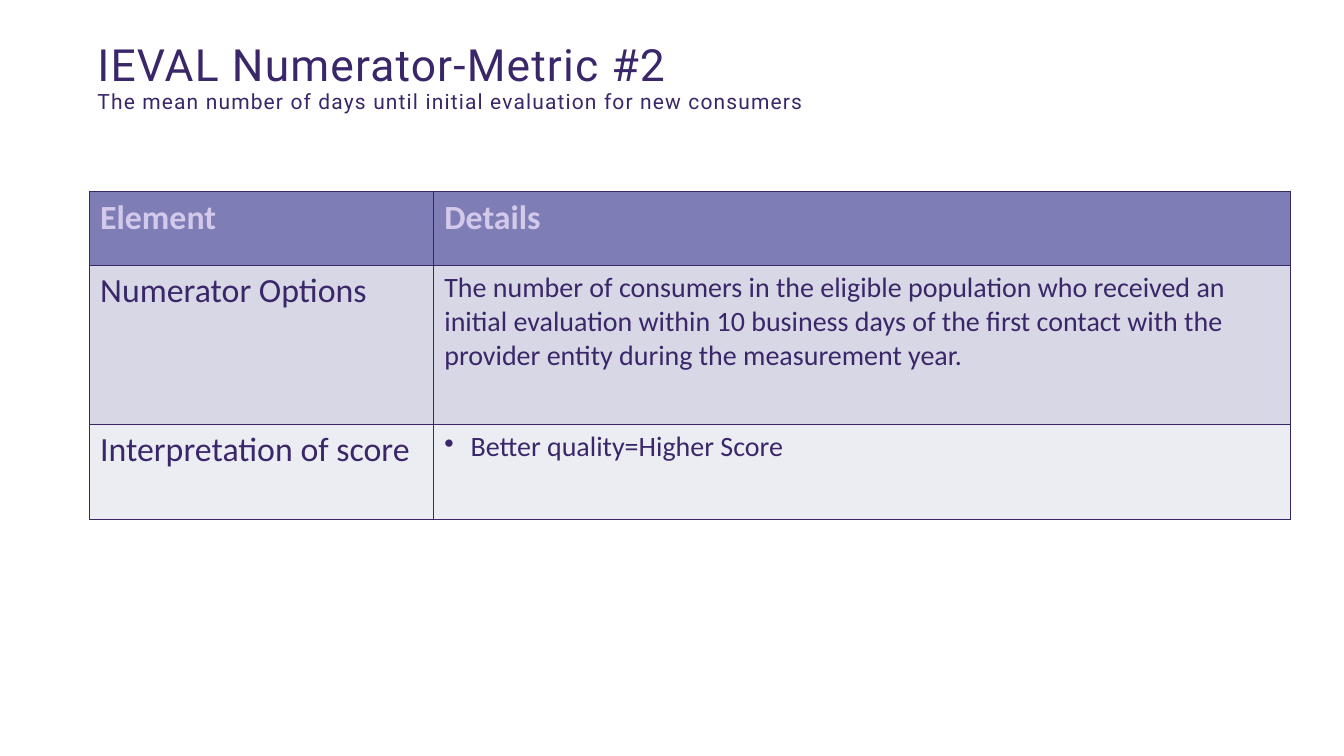
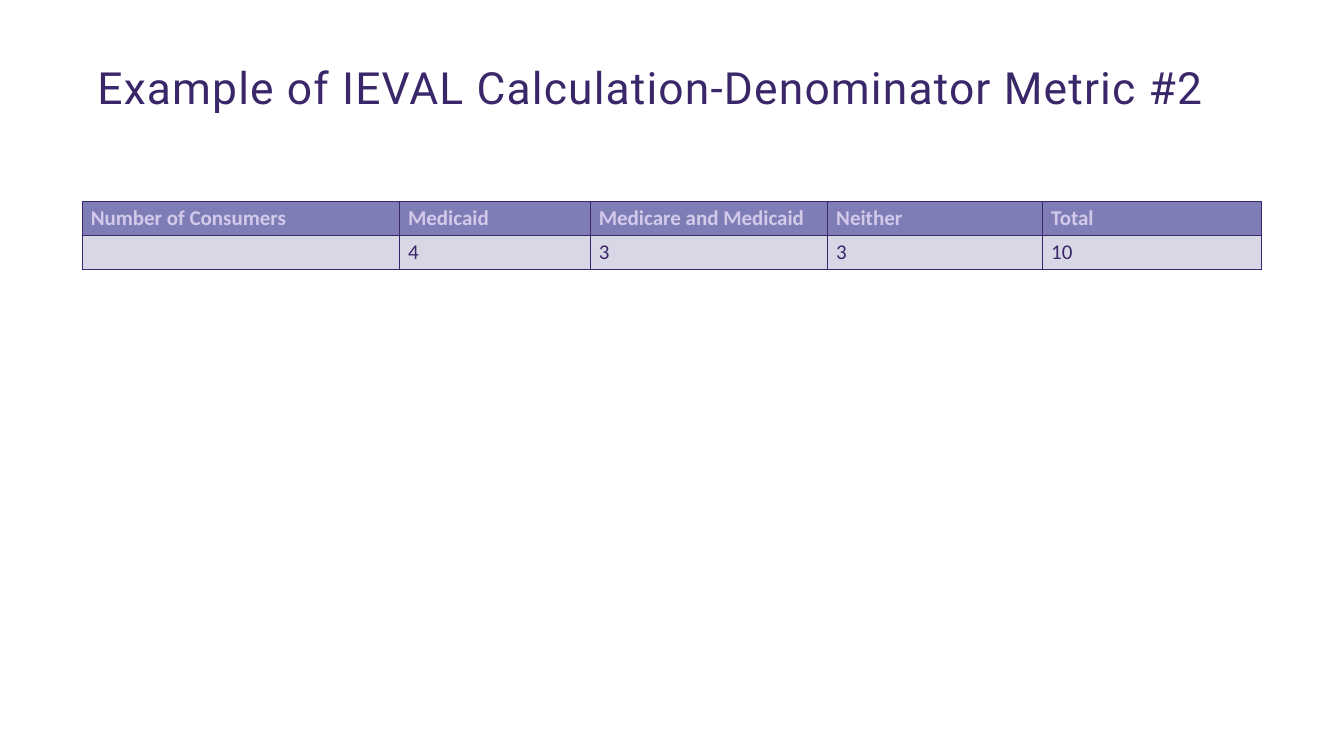
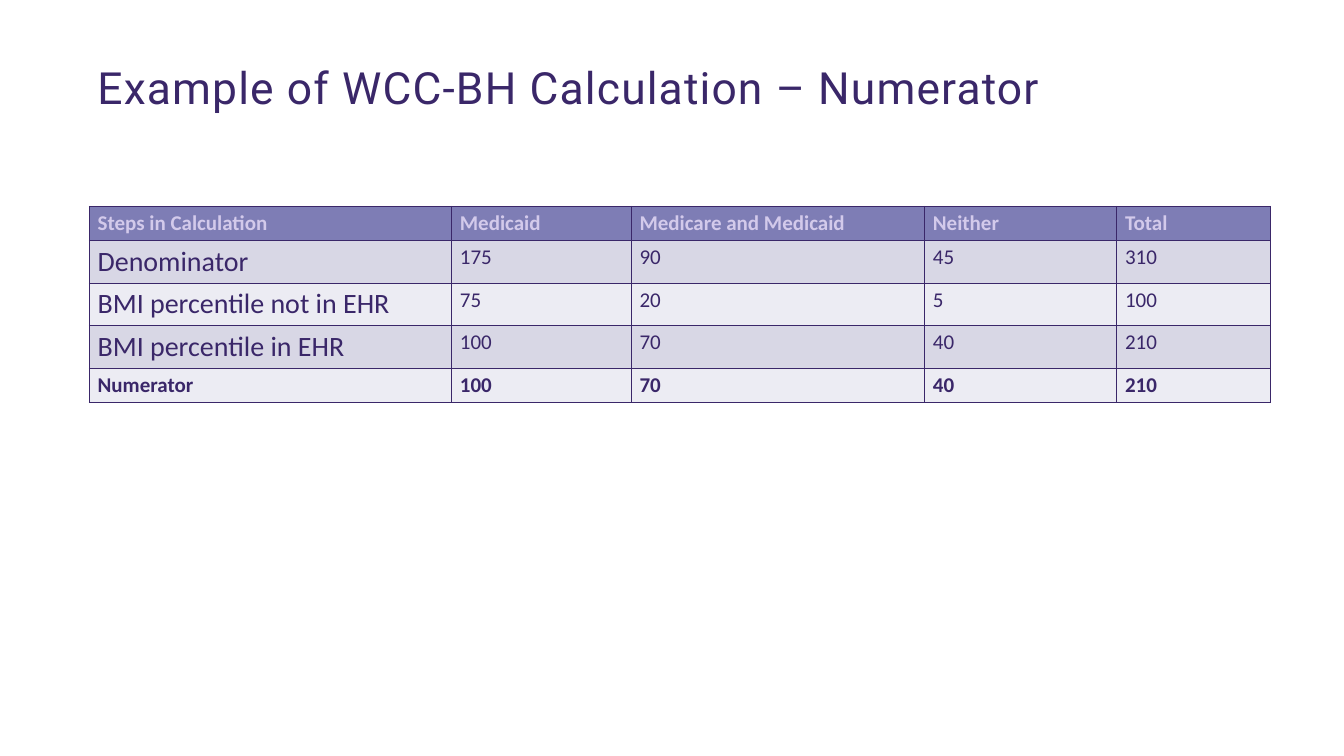
import pptx
import pptx.dml.color
import pptx.enum.text
import pptx.oxml
import pptx.oxml.ns
import pptx.util

Pt = pptx.util.Pt
COLORS = {
    "ink": "3A2769",
    "header_fill": "7E7DB5",
    "header_text": "D3CAEB",
    "band_dark": "D8D7E5",
    "band_light": "ECECF3",
}
TITLE_FONT = "Roboto"
TABLE_FONT = "Calibri"
TITLE_LEFT = 76.3
PAYERS = ["Medicaid", "Medicare and Medicaid", "Neither", "Total"]


def color(name):
    return pptx.dml.color.RGBColor.from_string(COLORS[name])


def add_title_run(para, text, size):
    span = para.add_run()
    span.text = text
    span.font.size = Pt(size)
    span._r.get_or_add_rPr().set("spc", "100")


def add_page(deck, title, top, width, height, subtitle=None):
    page = deck.slides.add_slide(deck.slide_layouts[5])
    box = page.shapes.title
    box.left, box.top = Pt(TITLE_LEFT), Pt(top)
    box.width, box.height = Pt(width), Pt(height)
    frame = box.text_frame
    frame.word_wrap = True
    frame.auto_size = pptx.enum.text.MSO_AUTO_SIZE.NONE
    frame.vertical_anchor = pptx.enum.text.MSO_ANCHOR.TOP
    para = frame.paragraphs[0]
    para.alignment = pptx.enum.text.PP_ALIGN.LEFT
    para.line_spacing = 0.9
    para.font.name = TITLE_FONT
    para.font.size = Pt(38)
    para.font.color.rgb = color("ink")
    add_title_run(para, title, 38)
    if subtitle:
        para.add_line_break()
        add_title_run(para, subtitle, 18)
    return page


def set_borders(cell):
    properties = cell._tc.get_or_add_tcPr()
    for side in ("lnL", "lnR", "lnT", "lnB"):
        properties.append(pptx.oxml.parse_xml(
            f'<a:{side} {pptx.oxml.ns.nsdecls("a")} w="{Pt(1)}"><a:solidFill>'
            f'<a:srgbClr val="{COLORS["ink"]}"/></a:solidFill></a:{side}>'))


def style_cell(cell, text, size, bold, text_color, fill):
    set_borders(cell)
    cell.fill.solid()
    cell.fill.fore_color.rgb = color(fill)
    cell.text = text
    font = cell.text_frame.paragraphs[0].font
    font.name = TABLE_FONT
    font.size = Pt(size)
    font.bold = bold
    font.color.rgb = color(text_color)


def add_table(page, left, top, widths, heights, rows,
              header_size=18, label_size=18, body_size=18,
              margins=(7.2, 3.6), total_row=None):
    table = page.shapes.add_table(
        len(rows), len(widths), Pt(left), Pt(top),
        Pt(sum(widths)), Pt(sum(heights))).table
    table.first_row = table.horz_banding = False
    for column, width in zip(table.columns, widths):
        column.width = Pt(width)
    for index, (texts, height) in enumerate(zip(rows, heights)):
        table.rows[index].height = Pt(height)
        is_header = index == 0
        is_total = index == total_row
        if is_header:
            fill, text_color = "header_fill", "header_text"
        else:
            fill = "band_dark" if index % 2 else "band_light"
            text_color = "ink"
        for number, text in enumerate(texts):
            cell = table.cell(index, number)
            cell.margin_left = cell.margin_right = Pt(margins[0])
            cell.margin_top = cell.margin_bottom = Pt(margins[1])
            if is_header:
                size = header_size
            elif number == 0 and not is_total:
                size = label_size
            else:
                size = body_size
            style_cell(cell, text, size, is_header or is_total, text_color, fill)
    return table


def add_bullet(para, indent):
    properties = para._p.get_or_add_pPr()
    properties.set("marL", str(Pt(indent)))
    properties.set("indent", str(-Pt(indent)))
    properties.insert(0, pptx.oxml.parse_xml(
        f'<a:buChar {pptx.oxml.ns.nsdecls("a")} char="•"/>'))


def add_numerator_page(deck):
    page = add_page(
        deck, "IEVAL Numerator-Metric #2", 33.8, 1030.3, 120,
        "The mean number of days until initial evaluation for new consumers")
    table = add_table(
        page, 76.5, 164, [295, 734.5], [63.2, 136.5, 81.4],
        [["Element", "Details"],
         ["Numerator Options",
          "The number of consumers in the eligible population who received an "
          "initial evaluation within 10 business days of the first contact with "
          "the provider entity during the measurement year."],
         ["Interpretation of score", "Better quality=Higher Score"]],
        header_size=29, label_size=29, body_size=24, margins=(9.4, 4.7))
    add_bullet(table.cell(2, 1).text_frame.paragraphs[0], 22.5)


def add_denominator_page(deck):
    page = add_page(
        deck, "Example of IEVAL Calculation-Denominator Metric #2",
        53.3, 981.4, 110.9)
    add_table(
        page, 70.6, 172.6, [272, 163.5, 203.5, 184.3, 187.2], [29.2] * 2,
        [["Number of Consumers"] + PAYERS, ["", "4", "3", "3", "10"]])


def add_calculation_page(deck):
    page = add_page(
        deck, "Example of WCC-BH Calculation – Numerator", 53.3, 864, 110.9)
    add_table(
        page, 76.5, 177, [310.5, 154, 251.5, 164.7, 132], [29.2] + [36.5] * 3 + [29.2],
        [["Steps in Calculation"] + PAYERS,
         ["Denominator", "175", "90", "45", "310"],
         ["BMI percentile not in EHR", "75", "20", "5", "100"],
         ["BMI percentile in EHR", "100", "70", "40", "210"],
         ["Numerator", "100", "70", "40", "210"]],
        label_size=24, total_row=4)


def main():
    deck = pptx.Presentation()
    deck.slide_width, deck.slide_height = Pt(1152), Pt(648)
    add_numerator_page(deck)
    add_denominator_page(deck)
    add_calculation_page(deck)
    deck.save("out.pptx")


if __name__ == "__main__":
    main()
